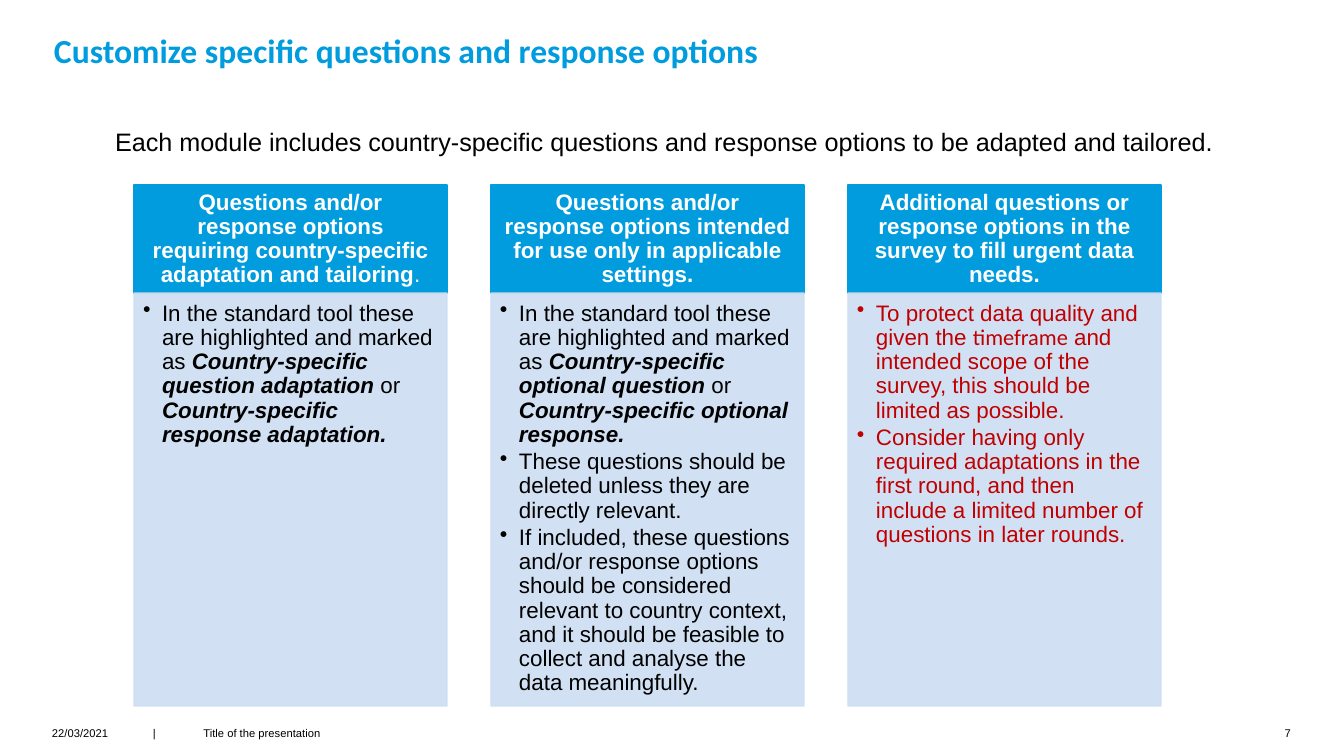
from dataclasses import dataclass

import pptx
import pptx.dml.color
import pptx.enum.shapes
import pptx.enum.text
import pptx.oxml.ns
import pptx.util
from lxml import etree

ALIGN = pptx.enum.text.PP_ALIGN
ANCHOR = pptx.enum.text.MSO_ANCHOR
EMU_PER_PX = 914400 / 100.8


@dataclass(frozen=True)
class Theme:
    blue: str = "009CDE"
    pale_blue: str = "CCDEF2"
    black: str = "000000"
    white: str = "FFFFFF"
    red: str = "C00000"
    text_font: str = "Arial"
    title_font: str = "Calibri"
    title_size: int = 24
    lead_size: int = 18
    column_size: int = 16
    footer_size: int = 8


THEME = Theme()
EMPHASIS = {"bold": True, "italic": True}


def px(length):
    return round(length * EMU_PER_PX)


def set_all(target, values):
    for name, value in values.items():
        setattr(target, name, value)


def add_xml(parent, tag, **attributes):
    return etree.SubElement(parent, pptx.oxml.ns.qn(tag), attributes)


class SlideBuilder:
    def __init__(self, presentation, theme):
        self.theme = theme
        self.slide = presentation.slides.add_slide(presentation.slide_layouts[1])

    def place(self, shape, box):
        set_all(shape, dict(zip(("left", "top", "width", "height"), map(px, box))))

    def fill_text(self, shape, paragraphs, size, color, insets=(0, 0, 0, 0), anchor=ANCHOR.TOP,
                  indent=0, hanging=0, bullet=None, tab=None, font=None, bold=False, **spacing):
        """Fill a shape with paragraphs, each a list of (text, font overrides) runs."""
        frame = shape.text_frame
        margins = ("margin_left", "margin_top", "margin_right", "margin_bottom")
        set_all(frame, dict(zip(margins, map(px, insets))))
        set_all(frame, {"word_wrap": True, "vertical_anchor": anchor,
                        "auto_size": pptx.enum.text.MSO_AUTO_SIZE.NONE})
        base = {"name": font or self.theme.text_font, "size": pptx.util.Pt(size),
                "bold": bold, "italic": False}
        layout = {"alignment": ALIGN.LEFT, "space_before": pptx.util.Pt(0), **spacing}
        for index, runs in enumerate(paragraphs):
            paragraph = frame.add_paragraph() if index else frame.paragraphs[0]
            properties = paragraph._p.get_or_add_pPr()
            properties.set("marL", str(px(indent)))
            properties.set("indent", str(-px(hanging)))
            if bullet:
                add_xml(properties, "a:buChar", char=bullet)
            else:
                add_xml(properties, "a:buNone")
            if tab:
                add_xml(add_xml(properties, "a:tabLst"), "a:tab", pos=str(px(tab)), algn="l")
            set_all(paragraph, layout)
            for text, overrides in runs:
                run = paragraph.add_run()
                run.text = text
                set_all(run.font, {**base, **overrides})
                run.font.color.rgb = pptx.dml.color.RGBColor.from_string(color)

    def title(self, text, box):
        shape = self.slide.shapes.title
        self.place(shape, box)
        self.fill_text(shape, [[(text, {})]], self.theme.title_size, self.theme.blue,
                       insets=(2, 0, 39, 0), anchor=ANCHOR.BOTTOM,
                       font=self.theme.title_font, bold=True, line_spacing=0.9)

    def lead(self, text, box):
        shape = self.slide.placeholders[1]
        self.place(shape, box)
        self.fill_text(shape, [[(text, {})]], self.theme.lead_size, self.theme.black,
                       indent=51, line_spacing=1.1, space_after=pptx.util.Pt(6))

    def panel(self, box, color, opacity=100):
        shape = self.slide.shapes.add_shape(
            pptx.enum.shapes.MSO_SHAPE.RECTANGLE, *map(px, box))
        shape.shadow.inherit = False
        for fill in (shape.fill, shape.line.fill):
            fill.solid()
            fill.fore_color.rgb = pptx.dml.color.RGBColor.from_string(color)
        shape.line.width = pptx.util.Pt(1)
        if opacity < 100:
            for node in list(shape._element.spPr.iter(pptx.oxml.ns.qn("a:srgbClr"))):
                add_xml(node, "a:alpha", val=str(opacity * 1000))
        return shape

    def column(self, left, heading, points, color):
        size = self.theme.column_size
        header = self.panel((left, 185, 313, 108), self.theme.blue)
        self.fill_text(header, [heading], size, self.theme.white, insets=(12, 7, 12, 7),
                       anchor=ANCHOR.MIDDLE, bold=True, alignment=ALIGN.CENTER,
                       line_spacing=0.9)
        body = self.panel((left, 293, 313, 413), self.theme.pale_blue, opacity=90)
        self.fill_text(body, points, size, color, insets=(9, 9, 12, 14), indent=19, hanging=19,
                       bullet="•", line_spacing=0.9, space_after=pptx.util.Pt(size * 0.15))

    def footer(self, text, left, width, **options):
        shape = self.slide.shapes.add_textbox(*map(px, (left, 726, width, 20)))
        self.fill_text(shape, [[(text, {})]], self.theme.footer_size, self.theme.black,
                       **options)


def marked_as(first, second):
    return [("In the standard tool these are highlighted and marked as ", {}),
            (f"Country-specific {first} ", EMPHASIS), ("or ", {}),
            (f"Country-specific {second}.", EMPHASIS)]


COLUMNS = [
    ([("Questions and/or response options requiring country-specific "
       "adaptation and tailoring", {}), (".", {"bold": False})],
     [marked_as("question adaptation", "response adaptation")],
     THEME.black),
    ([("Questions and/or response options intended for use only in applicable settings.", {})],
     [marked_as("optional question", "optional response"),
      [("These questions should be deleted unless they are directly relevant.", {})],
      [("If included, these questions and/or response options should be considered "
        "relevant to country context, and it should be feasible to collect and "
        "analyse the data meaningfully.", {})]],
     THEME.black),
    ([("Additional questions or response options in the survey to fill "
       "urgent data needs.", {})],
     [[("To protect data quality and given the ", {}),
       ("timeframe", {"name": THEME.title_font}),
       (" and intended scope of the survey, this should be limited as possible.", {})],
      [("Consider having only required adaptations in the first round, and then "
        "include a limited number of questions in later rounds.", {})]],
     THEME.red),
]


def main():
    presentation = pptx.Presentation()
    set_all(presentation, {"slide_width": px(1344), "slide_height": px(756)})
    builder = SlideBuilder(presentation, THEME)
    builder.title("Customize specific questions and response options", (52, 39, 899, 32))
    builder.lead("Each module includes country-specific questions and response options "
                 "to be adapted and tailored.", (64, 123, 1169, 107))
    for index, (heading, points, color) in enumerate(COLUMNS):
        builder.column(134 + 357 * index, heading, points, color)
    builder.footer("22/03/2021", 52, 87)
    builder.footer("|\tTitle of the presentation", 153, 328, tab=19)
    builder.footer("7", 1259, 32, alignment=ALIGN.RIGHT)
    presentation.save("out.pptx")


if __name__ == "__main__":
    main()
